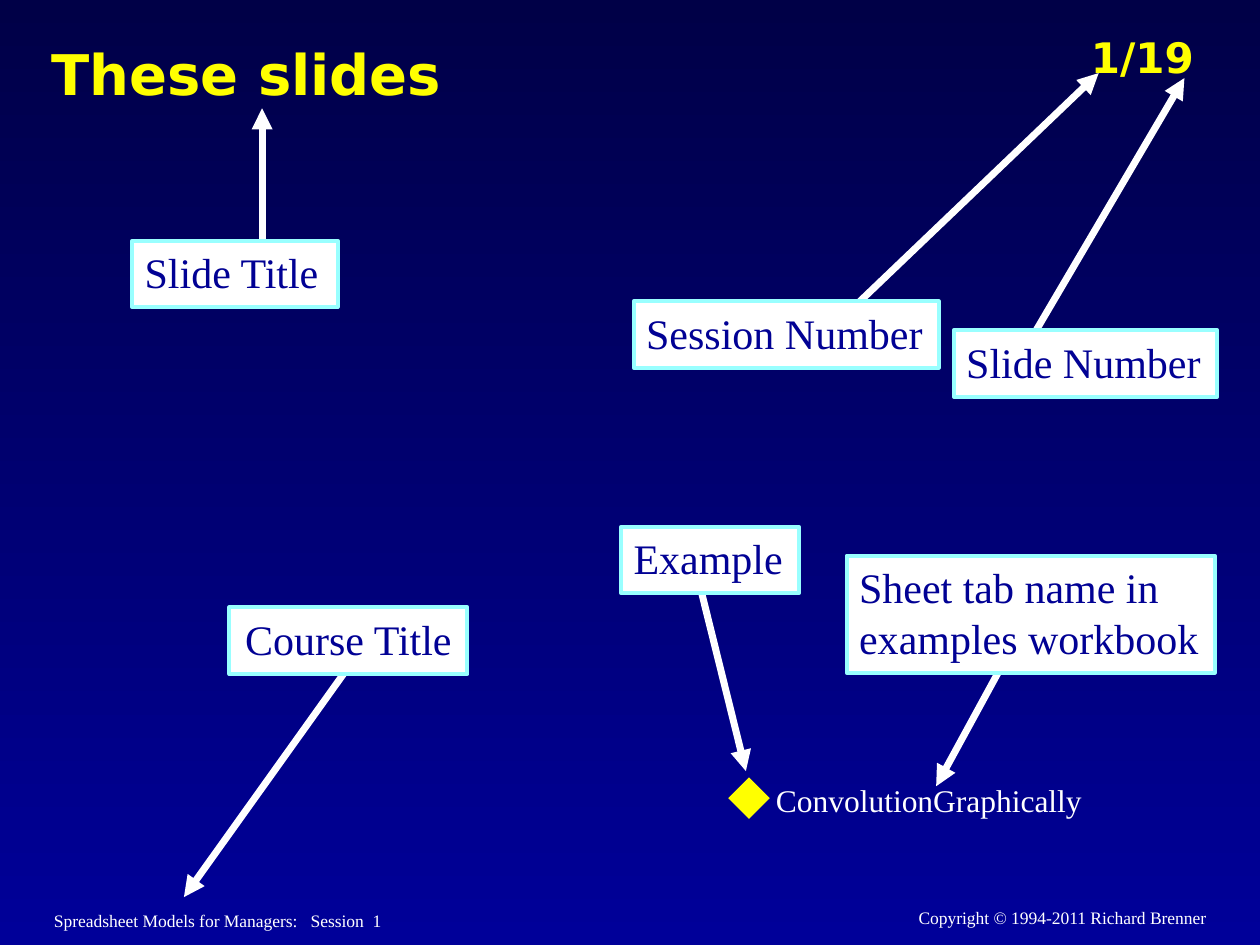
from lxml import etree
from pptx import Presentation
from pptx import util as u
from pptx.dml.color import RGBColor
from pptx.enum import shapes, text
from pptx.oxml.ns import qn

SERIF, SANS = "Times New Roman", "DejaVu Sans"
WHITE, YELLOW, NAVY, CYAN = "FFFFFF", "FFFF00", "010194", "99FFFF"


def rgb(value):
    return RGBColor.from_string(value)


def inches(*values):
    return [u.Inches(v) for v in values]


class SlideBuilder:
    """Holds the slide and the style shared by its elements."""

    line_width = u.Pt(4)
    border_width = u.Pt(2.25)
    label_size = 24

    def __init__(self, s):
        self.s = s

    def background(self, top, bottom):
        fill = self.s.background.fill
        fill.gradient()
        fill.gradient_angle = 270
        for stop, color in zip(fill.gradient_stops, (top, bottom)):
            stop.color.rgb = rgb(color)

    def add_text(self, sp, lines, size, color, font=SERIF, bold=False,
                 align=text.PP_ALIGN.LEFT, wrap=False, grow=True):
        tf = sp.text_frame
        tf.word_wrap = wrap
        tf.vertical_anchor = text.MSO_ANCHOR.TOP
        if grow:
            tf.auto_size = text.MSO_AUTO_SIZE.SHAPE_TO_FIT_TEXT
        for i, line in enumerate(lines):
            p = tf.add_paragraph() if i else tf.paragraphs[0]
            p.alignment = align
            r = p.add_run()
            r.text = line
            r.font.name, r.font.size, r.font.bold = font, u.Pt(size), bold
            r.font.color.rgb = rgb(color)
        return tf

    def textbox(self, at, line, size, color, **style):
        sp = self.s.shapes.add_textbox(*inches(*at))
        return self.add_text(sp, [line], size, color, **style)

    def shape(self, kind, at, fill):
        sp = self.s.shapes.add_shape(kind, *inches(*at))
        sp.shadow.inherit = False
        sp.fill.solid()
        sp.fill.fore_color.rgb = rgb(fill)
        sp.line.fill.background()
        return sp

    def label(self, at, *lines, **style):
        sp = self.shape(shapes.MSO_SHAPE.RECTANGLE, at, WHITE)
        sp.line.color.rgb = rgb(CYAN)
        sp.line.width = self.border_width
        self.add_text(sp, lines, self.label_size, NAVY, **style)

    def arrow(self, start, end):
        cx = self.s.shapes.add_connector(
            shapes.MSO_CONNECTOR.STRAIGHT, *inches(*start, *end))
        cx.line.color.rgb = rgb(WHITE)
        cx.line.width = self.line_width
        ln = cx._element.spPr.find(qn("a:ln"))
        etree.SubElement(ln, qn("a:tailEnd"), type="triangle")
        etree.SubElement(cx._element.spPr, qn("a:effectLst"))


def main():
    prs = Presentation()
    prs.slide_width, prs.slide_height = inches(10, 7.5)
    b = SlideBuilder(prs.slides.add_slide(prs.slide_layouts[6]))
    b.background("000047", "000099")

    # Footer and page number
    b.textbox((0.33, 7.17, 5.55, 0.26),
              "Spreadsheet Models for Managers:   Session  1", 10, WHITE, wrap=True)
    b.textbox((8.56, 0.2, 1.32, 0.5), "1/19", 24, YELLOW, font=SANS, bold=True)
    b.textbox((6.52, 7.15, 3.15, 0.26), "Copyright © 1994-2011 Richard Brenner",
              10, WHITE, align=text.PP_ALIGN.RIGHT, wrap=True)

    # Title
    tf = b.textbox((0.31, 0.15, 7.69, 0.93), "These slides", 32, YELLOW,
                   font=SANS, bold=True, wrap=True, grow=False)
    tf.vertical_anchor = text.MSO_ANCHOR.MIDDLE
    tf.paragraphs[0].line_spacing = 0.9

    # Arrows, from each label to the part it names
    for start, end in [
        ((7.97, 5.25), (7.43, 6.24)),
        ((5.56, 4.67), (5.92, 6.12)),
        ((6.68, 2.53), (8.72, 0.58)),
        ((8.06, 2.9), (9.4, 0.62)),
        ((2.79, 5.26), (1.46, 7.12)),
        ((2.08, 1.93), (2.08, 0.86)),
    ]:
        b.arrow(start, end)

    # Labels, which cover the arrow starts
    b.label((5.03, 2.39, 2.42, 0.53), "Session Number")
    b.label((7.57, 2.62, 2.09, 0.53), "Slide Number")
    b.label((1.82, 4.82, 1.89, 0.53), "Course Title", align=text.PP_ALIGN.CENTER)
    b.label((1.05, 1.91, 1.63, 0.53), "Slide Title")
    b.label((4.93, 4.18, 1.41, 0.53), "Example")
    b.label((6.72, 4.41, 2.92, 0.93), "Sheet tab name in", "examples workbook")

    # Example marker and sheet name
    b.shape(shapes.MSO_SHAPE.DIAMOND, (5.78, 6.17, 0.33, 0.33), YELLOW)
    b.textbox((6.06, 6.15, 2.63, 0.4), "ConvolutionGraphically", 18, WHITE)

    prs.save("out.pptx")


if __name__ == "__main__":
    main()
